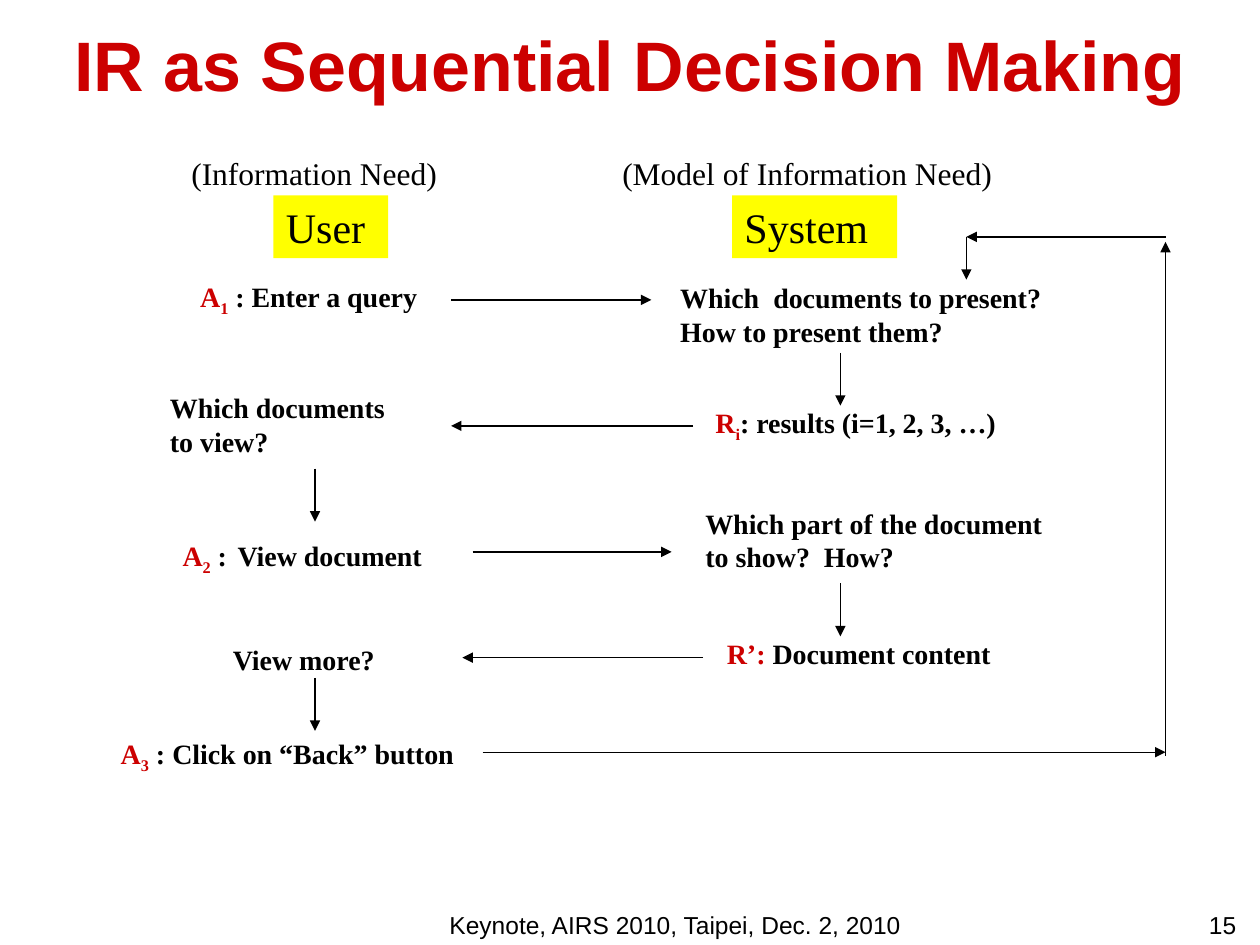
from pptx import Presentation
from pptx import util as u
from pptx.dml.color import RGBColor
from pptx.enum import shapes, text
from pptx.oxml.ns import qn
from lxml import etree

SERIF, SANS = "Times New Roman", "Arial"
BLACK, RED, YELLOW = "000000", "CC0000", "FFFF00"
USER_X, SYSTEM_X, LOOP_X, RETURN_X = 2.5, 6.67, 9.25, 7.67
LOOP_Y = 1.88

# Run formats: a run differs from its label only in these values
ACTION = {"color": RED}
SUBSCRIPT = {"color": RED, "baseline": -25000}
GAP = {"size": 24, "bold": False}


def rgb(value):
    return RGBColor.from_string(value)


def add_run(paragraph, words, size, bold=False, font=SERIF, color=BLACK, baseline=None):
    run = paragraph.add_run()
    run.text = words
    for name, value in {"name": font, "size": u.Pt(size), "bold": bold}.items():
        setattr(run.font, name, value)
    run.font.color.rgb = rgb(color)
    if baseline:
        run._r.get_or_add_rPr().set("baseline", str(baseline))


def fill_text(shape, lines, align=text.PP_ALIGN.LEFT, anchor=text.MSO_ANCHOR.TOP, **base):
    """Each line is a string or a list of (words, format) pairs."""
    frame = shape.text_frame
    frame.word_wrap = True
    frame.vertical_anchor = anchor
    for index, line in enumerate(lines):
        paragraph = frame.add_paragraph() if index else frame.paragraphs[0]
        paragraph.alignment = align
        for words, style in [(line, {})] if isinstance(line, str) else line:
            add_run(paragraph, words, **{**base, **style})


def add_label(slide, box, *lines, **style):
    label = slide.shapes.add_textbox(*map(u.Inches, box))
    fill_text(label, lines, **style)


def add_role(slide, left, width, name):
    role = slide.shapes.add_shape(
        shapes.MSO_SHAPE.RECTANGLE, *map(u.Inches, (left, 1.55, width, 0.5)))
    role.shadow.inherit = False
    role.fill.solid()
    role.fill.fore_color.rgb = rgb(YELLOW)
    role.line.fill.background()
    fill_text(role, [name], size=24)


def add_arrow(slide, x1, y1, x2, y2):
    arrow = slide.shapes.add_connector(
        shapes.MSO_CONNECTOR.STRAIGHT, *map(u.Inches, (x1, y1, x2, y2)))
    arrow.line.color.rgb = rgb(BLACK)
    arrow.line.width = u.Pt(0.75)
    etree.SubElement(arrow.line._get_or_add_ln(), qn("a:tailEnd"), type="triangle")
    etree.SubElement(arrow._element.spPr, qn("a:effectLst"))


def numbered(letter, number, rest):
    return [(letter, ACTION), (number, SUBSCRIPT), *rest]


def main():
    prs = Presentation()
    prs.slide_width, prs.slide_height = u.Inches(10), u.Inches(7.5)
    slide = prs.slides.add_slide(prs.slide_layouts[6])

    # Title and footer
    add_label(slide, (-0.25, -0.08, 10.5, 1.17), "IR as Sequential Decision Making",
              size=40, bold=True, font=SANS, color=RED,
              align=text.PP_ALIGN.CENTER, anchor=text.MSO_ANCHOR.MIDDLE)
    add_label(slide, (3.11, 7.17, 4.5, 0.5), "Keynote, AIRS 2010, Taipei, Dec. 2, 2010",
              size=14, font=SANS, align=text.PP_ALIGN.CENTER)
    add_label(slide, (7.83, 7.17, 2.08, 0.5), "15",
              size=14, font=SANS, align=text.PP_ALIGN.RIGHT)

    # Column heads
    add_label(slide, (1.42, 1.17, 2.29, 0.4), "(Information Need)", size=18)
    add_label(slide, (4.84, 1.17, 3.32, 0.4), "(Model of Information Need)", size=18)
    add_role(slide, 2.17, 0.91, "User")
    add_role(slide, 5.81, 1.31, "System")

    # Steps of the user, then of the system
    steps = [
        ((1.49, 2.17, 2.13, 0.37), [numbered("A", "1", [(" : Enter a query", {})])]),
        ((1.25, 3.05, 2.18, 0.64), ["Which documents", "to view?"]),
        ((1.35, 4.11, 2.31, 0.5),
         [numbered("A", "2", [(" :", {}), (" ", GAP), ("View document", {})])]),
        ((1.75, 5.05, 1.45, 0.37), ["View more?"]),
        ((0.86, 5.8, 3.08, 0.37),
         [numbered("A", "3", [(" : Click on “Back” button", {})])]),
        ((5.3, 2.18, 3.45, 0.64), ["Which  documents to present?", "How to present them?"]),
        ((5.58, 3.17, 2.64, 0.37),
         [numbered("R", "i", [(": results (i=1, 2, 3, …)", {})])]),
        ((5.5, 3.97, 3.2, 0.64), ["Which part of the document", "to show?  How?"]),
        ((5.67, 5, 2.51, 0.37), [[("R’:", ACTION), (" Document content", {})]]),
    ]
    for box, lines in steps:
        add_label(slide, box, *lines, size=16, bold=True)

    # Exchanges between user and system
    for start, end, y in [(3.58, 5.17, 2.38), (5.5, 3.58, 3.38), (3.75, 5.33, 4.38),
                          (5.58, 3.67, 5.22), (3.83, LOOP_X, 5.97)]:
        add_arrow(slide, start, y, end, y)

    # Decisions within a column
    for x, top in [(SYSTEM_X, 2.8), (USER_X, 3.72), (SYSTEM_X, 4.63), (USER_X, 5.38)]:
        add_arrow(slide, x, top, x, top + 0.42)

    # Loop back to the system
    add_arrow(slide, LOOP_X, 6, LOOP_X, 1.92)
    add_arrow(slide, LOOP_X, LOOP_Y, RETURN_X, LOOP_Y)
    add_arrow(slide, RETURN_X, LOOP_Y, RETURN_X, 2.22)

    prs.save("out.pptx")


if __name__ == "__main__":
    main()
